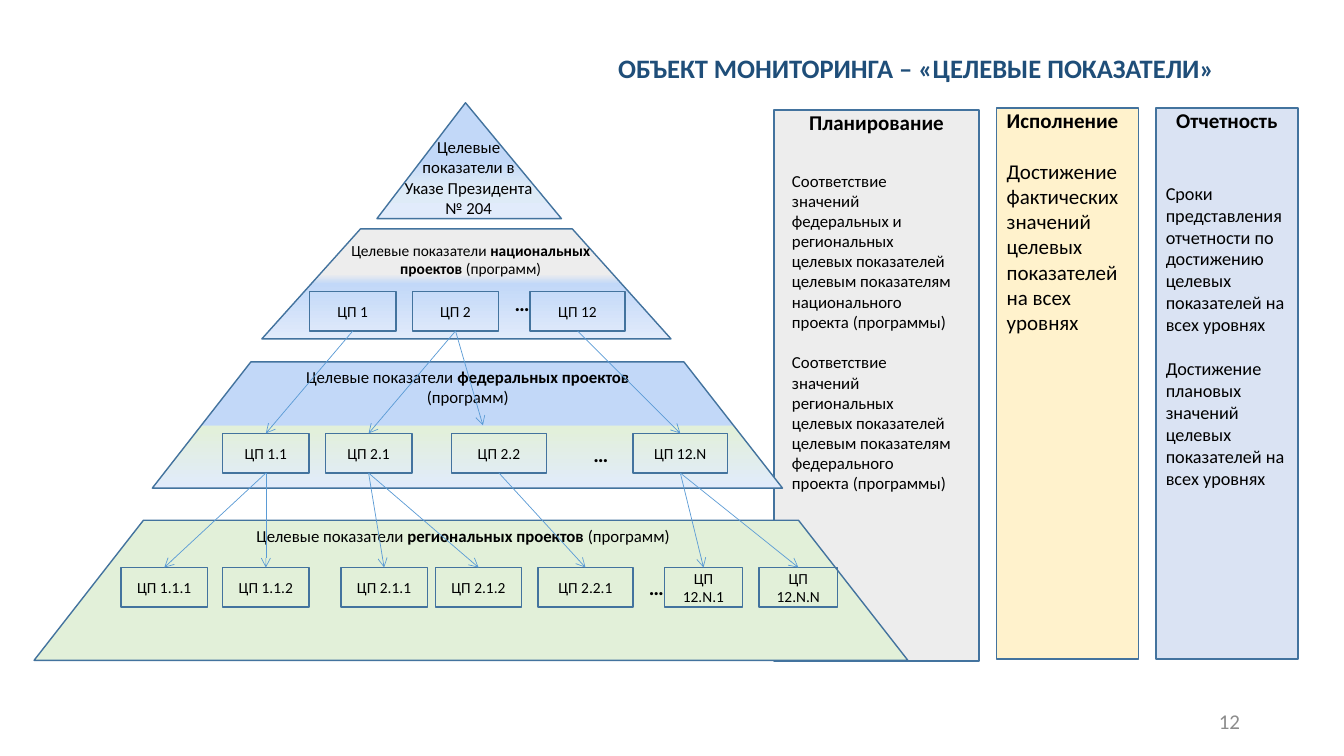
"""Build the slide on target indicators as the object of monitoring."""
from copy import deepcopy

from lxml import etree
from pptx import Presentation
from pptx.dml.color import RGBColor
from pptx.enum.shapes import MSO_CONNECTOR, MSO_SHAPE
from pptx.enum.text import MSO_ANCHOR, MSO_AUTO_SIZE, PP_ALIGN
from pptx.oxml.ns import qn
from pptx.util import Cm, Pt

RECTANGLE, TRAPEZOID = MSO_SHAPE.RECTANGLE, MSO_SHAPE.TRAPEZOID
TRIANGLE, STRAIGHT = MSO_SHAPE.ISOSCELES_TRIANGLE, MSO_CONNECTOR.STRAIGHT
LEFT, CENTER, RIGHT = PP_ALIGN.LEFT, PP_ALIGN.CENTER, PP_ALIGN.RIGHT
TOP, MIDDLE = MSO_ANCHOR.TOP, MSO_ANCHOR.MIDDLE
NO_AUTOFIT = MSO_AUTO_SIZE.NONE

BLACK = RGBColor(0x00, 0x00, 0x00)
NAVY = RGBColor(0x1F, 0x4E, 0x79)
OUTLINE = RGBColor(0x43, 0x73, 0x9E)
ARROW = RGBColor(0x5B, 0x9B, 0xD5)
PAGE_GRAY = RGBColor(0x8C, 0x8C, 0x8C)
GRAY = RGBColor(0xED, 0xED, 0xED)
GREEN = RGBColor(0xE2, 0xF0, 0xD9)
YELLOW = RGBColor(0xFF, 0xF2, 0xCC)
LAVENDER = RGBColor(0xDA, 0xE3, 0xF3)
SKY = RGBColor(0xC2, 0xD8, 0xF8)
PALE_BLUE = RGBColor(0xDE, 0xEB, 0xF7)
PALE_SKY = RGBColor(0xE1, 0xEB, 0xFB)


def add_outlined(kind, place, stops=()):
    """Add a shape filled with nothing, one colour or a vertical gradient."""
    shape = slide.shapes.add_shape(kind, *map(Cm, place))
    shape.shadow.inherit = False
    shape.line.color.rgb = OUTLINE
    shape.line.width = Pt(1)
    if not stops:
        shape.fill.background()
    elif len(stops) == 1:
        shape.fill.solid()
        shape.fill.fore_color.rgb = stops[0][1]
    else:
        shape.fill.gradient()
        shape.fill.gradient_angle = 270
        stop_list = shape.element.spPr.find(".//" + qn("a:gsLst"))
        stop_list.append(deepcopy(stop_list[0]))
        for stop, (percent, color) in zip(shape.fill.gradient_stops, stops):
            stop.position = percent / 100
            stop.color.rgb = color
    return shape


def write(frame, runs, size, align=CENTER, anchor=MIDDLE, before=0, color=BLACK):
    """Add one paragraph made of (text, bold) runs."""
    paragraph = frame.add_paragraph() if frame.text else frame.paragraphs[0]
    frame.word_wrap = True
    frame.vertical_anchor = anchor
    paragraph.alignment = align
    if before:
        paragraph.space_before = Pt(before)
    for text, bold in runs:
        run = paragraph.add_run()
        run.text = text
        run.font.name = "Calibri"
        run.font.size = Pt(size)
        run.font.bold = bold
        run.font.color.rgb = color


prs = Presentation()
prs.slide_width, prs.slide_height = Cm(33.87), Cm(19.05)
slide = prs.slides.add_slide(prs.slide_layouts[5])

title = slide.shapes.title
title.left, title.top, title.width, title.height = map(Cm, (13.36, 0.61, 19.46, 2.18))
title.text_frame.auto_size = NO_AUTOFIT
write(title.text_frame, [("ОБЪЕКТ МОНИТОРИНГА – «ЦЕЛЕВЫЕ ПОКАЗАТЕЛИ»", True)], 19, color=NAVY)

stages = [
    ("Планирование", CENTER, (19.51, 2.77, 5.16, 13.89), GRAY, []),
    ("Исполнение", LEFT, (25.12, 2.72, 3.58, 13.89), YELLOW, [
        ("Достижение фактических значений целевых показателей на всех уровнях", 15, 18)]),
    ("Отчетность", CENTER, (29.13, 2.72, 3.58, 13.89), LAVENDER, [
        ("Сроки представления отчетности по достижению целевых показателей на всех уровнях", 13, 35),
        ("Достижение плановых значений целевых показателей на всех уровнях", 13, 16)]),
]
for heading, align, place, color, requirements in stages:
    stage = add_outlined(RECTANGLE, place, [(100, color)])
    stage.text_frame.margin_top = 0
    write(stage.text_frame, [(heading, True)], 15, align, TOP)
    for text, size, before in requirements:
        write(stage.text_frame, [(text, False)], size, LEFT, TOP, before)

tiers = [
    (TRAPEZOID, (0.86, 13.11, 22.02, 3.53), 0.781, [(100, GREEN)]),
    (TRAPEZOID, (6.6, 5.77, 10.31, 2.77), 0.897, [(41, GRAY), (50, SKY), (100, PALE_SKY)]),
    (TRIANGLE, (9.5, 2.59, 4.65, 2.92), 0.48, [(50, SKY), (73, PALE_BLUE), (100, PALE_SKY)]),
    (TRAPEZOID, (3.84, 9.12, 15.88, 3.18), 0.781, [(50, SKY), (51, GREEN), (100, PALE_SKY)]),
]
for kind, place, slope, stops in tiers:
    add_outlined(kind, place, stops).adjustments[0] = slope

tier_titles = [
    ((9.93, 3.53, 3.76, 1.88), 12, MIDDLE, [("Целевые показатели в Указе Президента № 204", False)]),
    ((8.59, 5.94, 6.55, 1.19), 11, TOP, [
        ("Целевые показатели ", False), ("национальных проектов ", True), ("(программ)", False)]),
    ((6.43, 9.12, 10.72, 1.27), 12, TOP, [
        ("Целевые показатели ", False), ("федеральных проектов ", True), ("(программ)", False)]),
    ((3.63, 13.13, 16.08, 0.76), 12, TOP, [
        ("Целевые показатели ", False), ("региональных проектов ", True), ("(программ)", False)]),
]
for place, size, anchor, runs in tier_titles:
    write(slide.shapes.add_textbox(*map(Cm, place)).text_frame, runs, size, anchor=anchor)

for left, top in [(12.87, 7.34), (14.85, 11.13), (16.25, 14.48)]:
    ellipsis = slide.shapes.add_textbox(Cm(left), Cm(top), Cm(0.58), Cm(0.61)).text_frame
    ellipsis.margin_left = ellipsis.margin_right = 0
    write(ellipsis, [("…", True)], 15)

indicator_rows = [
    (7.34, [("1", 7.8, 2.18), ("2", 10.39, 2.18), ("12", 13.36, 2.39)]),
    (10.92, [("1.1", 5.61, 2.18), ("2.1", 8.2, 2.18), ("2.2", 11.38, 2.39), ("12.N", 15.95, 2.39)]),
    (14.3, [("1.1.1", 3.05, 2.18), ("1.1.2", 5.61, 2.18), ("2.1.1", 8.59, 2.18),
            ("2.1.2", 10.97, 2.18), ("2.2.1", 13.56, 2.39),
            ("12.N.1", 16.74, 1.98), ("12.N.N", 19.13, 1.98)]),
]
indicators = {}
for top, row in indicator_rows:
    for code, left, width in row:
        indicators[code] = add_outlined(RECTANGLE, (left, top, width, 1))
        write(indicators[code].text_frame, [("ЦП " + code, False)], 11)

for code, indicator in indicators.items():
    if "." not in code:
        continue
    link = slide.shapes.add_connector(STRAIGHT, 0, 0, Cm(12.17), Cm(10.72))
    link.begin_connect(indicators[code.rsplit(".", 1)[0]], 2)
    if code != "2.2":
        link.end_connect(indicator, 0)
    link.line.color.rgb = ARROW
    link.line.width = Pt(0.5)
    etree.SubElement(link.line._get_or_add_ln(), qn("a:tailEnd"), type="arrow")
    etree.SubElement(link.element.spPr, qn("a:effectLst"))

planning = slide.shapes.add_textbox(Cm(19.71), Cm(4.17), Cm(4.57), Cm(8.97)).text_frame
write(planning, [("Соответствие значений федеральных и региональных целевых показателей "
                  "целевым показателям национального проекта (программы)", False)], 12, LEFT, TOP)
write(planning, [("Соответствие значений региональных целевых показателей "
                  "целевым показателям федерального проекта (программы)", False)], 12, LEFT, TOP, 14.6)

page_number = slide.shapes.add_textbox(Cm(23.93), Cm(17.65), Cm(7.62), Cm(1.02)).text_frame
page_number.margin_right = Cm(0.3)
write(page_number, [("12", False)], 15, RIGHT, color=PAGE_GRAY)

prs.save("out.pptx")
